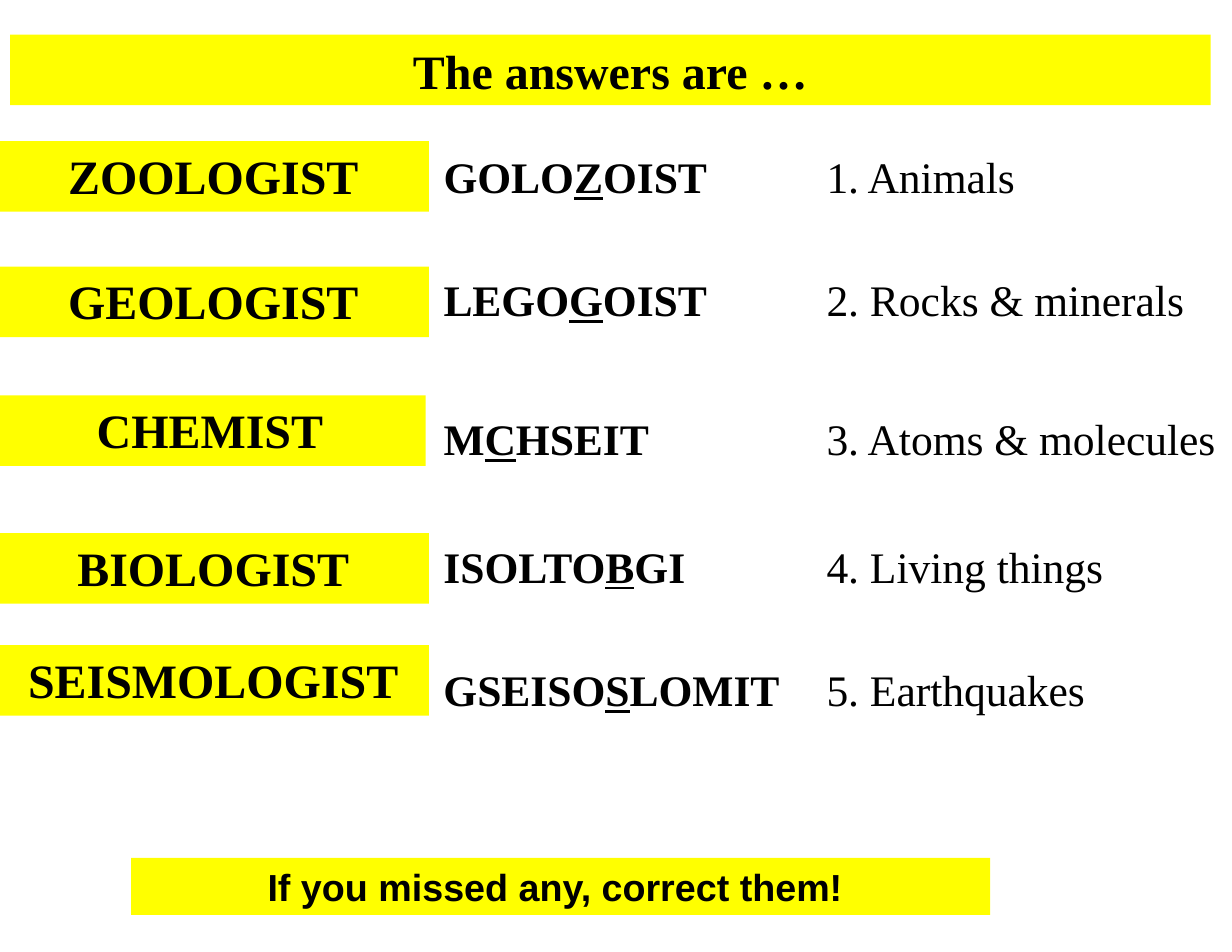
import pptx
import pptx.dml.color
import pptx.enum.shapes
import pptx.enum.text
import pptx.util

Inches = pptx.util.Inches
COLORS = {"text": "000000", "band": "FFFF00"}
SERIF, SANS = "Times New Roman", "Arial"


def rgb(name):
    return pptx.dml.color.RGBColor.from_string(COLORS[name])


class Deck:
    """Holds the style and the current slide, and adds each kind of element."""

    def __init__(self, prs):
        self.s = prs.slides.add_slide(prs.slide_layouts[6])

    def add_text(self, sp, runs, size, bold, font=SERIF, align="LEFT", anchor="TOP"):
        tf = sp.text_frame
        tf.margin_left = tf.margin_right = Inches(0.11)
        tf.margin_top = tf.margin_bottom = Inches(0.05)
        tf.word_wrap = True
        tf.auto_size = pptx.enum.text.MSO_AUTO_SIZE.SHAPE_TO_FIT_TEXT
        tf.vertical_anchor = pptx.enum.text.MSO_ANCHOR[anchor]
        p = tf.paragraphs[0]
        p.alignment = pptx.enum.text.PP_ALIGN[align]
        for text, underline in runs:
            r = p.add_run()
            r.text = text
            r.font.name = font
            r.font.size = pptx.util.Pt(size)
            r.font.bold = bold
            r.font.underline = underline
            r.font.color.rgb = rgb("text")

    def label(self, x, y, w, runs, bold=False):
        sp = self.s.shapes.add_textbox(Inches(x), Inches(y), Inches(w), Inches(0.58))
        self.add_text(sp, runs, 28, bold)

    def band(self, x, y, w, h, text, size=30.8, font=SERIF, anchor="TOP"):
        sp = self.s.shapes.add_shape(pptx.enum.shapes.MSO_SHAPE.RECTANGLE,
                                     Inches(x), Inches(y), Inches(w), Inches(h))
        sp.shadow.inherit = False
        sp.fill.solid()
        sp.fill.fore_color.rgb = rgb("band")
        sp.line.fill.background()
        self.add_text(sp, [(text, False)], size, True, font, "CENTER", anchor)


ROWS = [
    ("ZOOLOGIST", -0.02, 1.26, ("GOLO", "Z", "OIST"), 3.21, "Animals", 1.29),
    ("GEOLOGIST", -0.02, 2.38, ("LEGO", "G", "OIST"), 3.21, "Rocks & minerals", 2.39),
    ("CHEMIST", -0.05, 3.53, ("M", "C", "HSEIT"), 3.21, "Atoms & molecules", 3.63),
    ("BIOLOGIST", -0.02, 4.76, ("ISOLTO", "B", "GI"), 4.4, "Living things", 4.77),
    ("SEISMOLOGIST", -0.02, 5.76, ("GSEISO", "S", "LOMIT"), 4.4, "Earthquakes", 5.87),
]


def main():
    prs = pptx.Presentation()
    prs.slide_width, prs.slide_height = Inches(11), Inches(8.5)
    deck = Deck(prs)
    for number, (_, _, _, parts, width, clue, top) in enumerate(ROWS, 1):
        deck.label(3.85, top, width, zip(parts, (False, True, False)), bold=True)
        deck.label(7.27, top, 4.4, [(f"{number}. {clue}", False)])
    deck.band(0.09, 0.31, 10.72, 0.63, "The answers are …", anchor="MIDDLE")
    for answer, left, top, *_ in ROWS:
        deck.band(left, top, 3.85, 0.63, answer)
    deck.band(1.17, 7.66, 7.67, 0.51, "If you missed any, correct them! ", 24.2, SANS)
    prs.save("out.pptx")


if __name__ == "__main__":
    main()
